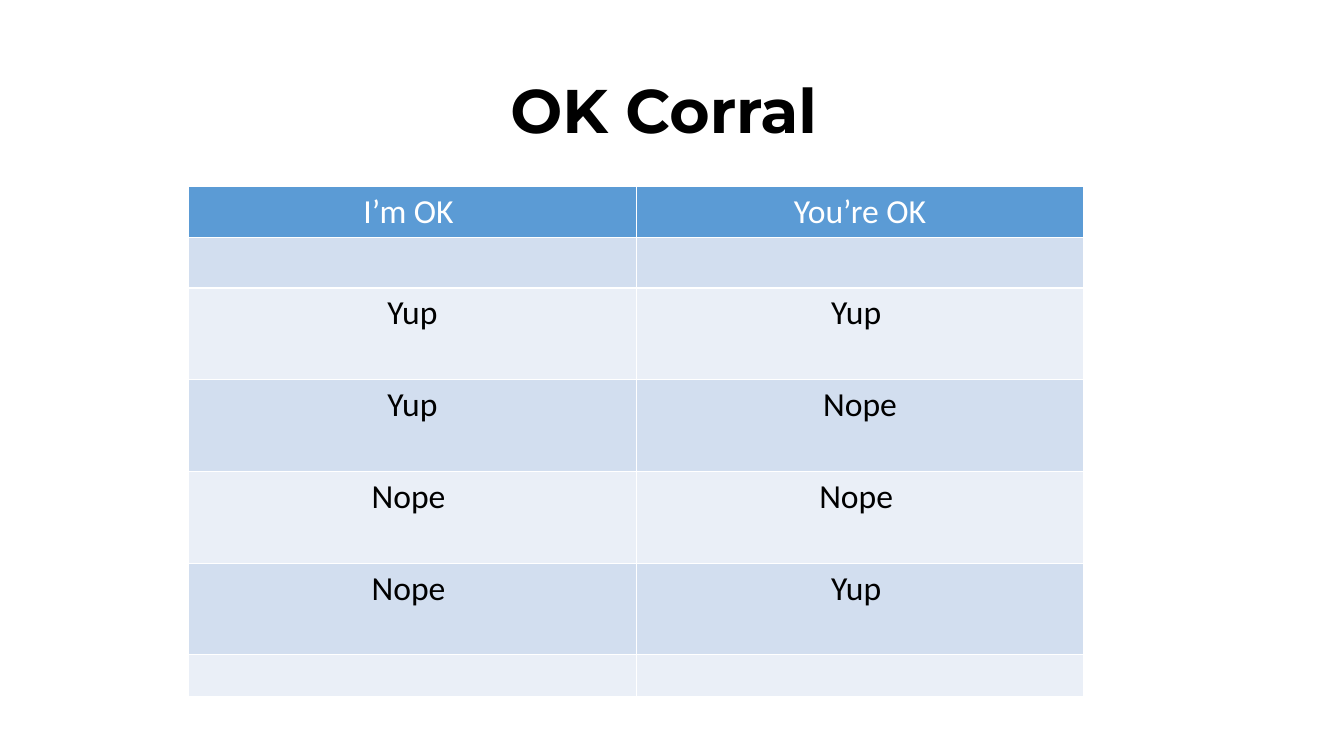
from pptx import Presentation
from pptx.dml.color import RGBColor
from pptx.enum.text import MSO_ANCHOR, PP_ALIGN
from pptx.util import Inches, Pt

CENTER = PP_ALIGN.CENTER
MIDDLE = MSO_ANCHOR.MIDDLE
TITLE_ONLY = 5

BLACK, WHITE = "000000", "FFFFFF"
HEAD, BANDS = "5B9BD5", ("EAEFF7", "D2DEEF")

TITLE = {"name": "Montserrat", "size": Pt(44), "bold": True}
CELL = {"name": "Calibri", "size": Pt(24), "bold": False}

ROWS = [
    ("I’m OK ", "You’re OK"),
    ("", ""),
    ("Yup", "Yup "),
    ("Yup", "Nope"),
    ("Nope ", "Nope "),
    ("Nope ", "Yup "),
    ("", ""),
]
HEIGHTS = [0.5, 0.5] + [0.91] * 4 + [0.41]


def color(code):
    return RGBColor.from_string(code)


def write(frame, text, look, code):
    """Put one centred run of formatted text into a frame."""
    para = frame.paragraphs[0]
    para.alignment = CENTER
    if not text:
        return
    run = para.add_run()
    run.text = text
    for key, value in look.items():
        setattr(run.font, key, value)
    run.font.color.rgb = color(code)


def add_title(slide, text):
    title = slide.shapes.title
    title.left, title.top = Inches(0.92), Inches(0.4)
    title.width, title.height = Inches(11.5), Inches(1.45)
    frame = title.text_frame
    frame.word_wrap = True
    frame.vertical_anchor = MIDDLE
    write(frame, text, TITLE, BLACK)
    frame.paragraphs[0].line_spacing = 0.9


def add_grid(slide, rows, heights):
    frame = slide.shapes.add_table(
        len(rows), len(rows[0]), Inches(1.87), Inches(1.85),
        Inches(8.88), Inches(sum(heights)))
    table = frame.table
    for r, (texts, height) in enumerate(zip(rows, heights)):
        table.rows[r].height = Inches(height)
        fill = BANDS[r % 2] if r else HEAD
        for c, text in enumerate(texts):
            cell = table.cell(r, c)
            cell.fill.solid()
            cell.fill.fore_color.rgb = color(fill)
            write(cell.text_frame, text, CELL, BLACK if r else WHITE)


def main():
    deck = Presentation()
    deck.slide_width, deck.slide_height = Inches(13.33), Inches(7.5)
    slide = deck.slides.add_slide(deck.slide_layouts[TITLE_ONLY])

    # Heading
    add_title(slide, "OK Corral ")

    # Table of answers
    add_grid(slide, ROWS, HEIGHTS)

    deck.save("out.pptx")


if __name__ == "__main__":
    main()
